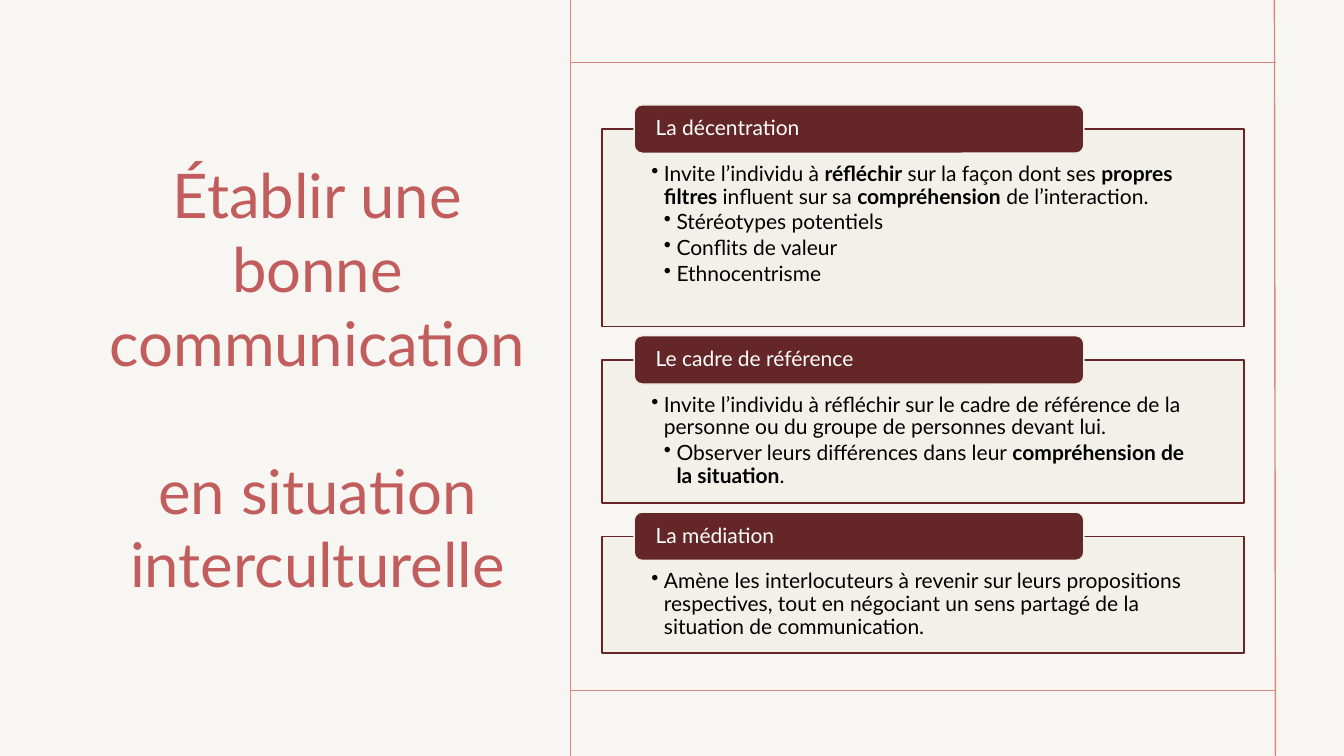
from dataclasses import dataclass

from lxml import etree
from pptx import Presentation
from pptx.dml.color import RGBColor
from pptx.enum.shapes import MSO_CONNECTOR, MSO_SHAPE
from pptx.enum.text import MSO_ANCHOR, PP_ALIGN
from pptx.oxml.ns import qn
from pptx.util import Inches, Pt

RECT, ROUND_RECT = MSO_SHAPE.RECTANGLE, MSO_SHAPE.ROUNDED_RECTANGLE
STRAIGHT = MSO_CONNECTOR.STRAIGHT
TOP, MIDDLE = MSO_ANCHOR.TOP, MSO_ANCHOR.MIDDLE
LEFT, CENTER = PP_ALIGN.LEFT, PP_ALIGN.CENTER

FONT = "Lato"
BACKGROUND, ROSE, SALMON = "F8F6F2", "C25D5D", "D8897E"
MAROON, CREAM, BLACK, WHITE = "642626", "F3F0E9", "000000", "FFFFFF"
TITLE_SIZE, BODY_SIZE = 44, 15
TAB_RISE = 0.24


@dataclass
class Bullet:
    level: int
    phrases: list[str]  # normal and bold text in turn, starting with normal


@dataclass
class Section:
    heading: str
    top: float
    height: float
    bullets: list[Bullet]


TITLE = ["Établir une bonne communication", "en situation interculturelle"]

SECTIONS = [
    Section("La décentration", 1.28, 1.96, [
        Bullet(1, ["Invite l’individu à ", "réfléchir", " sur la façon dont ses ",
                   "propres filtres ", "influent sur sa ", "compréhension",
                   " de l’interaction."]),
        Bullet(2, ["Stéréotypes potentiels"]),
        Bullet(2, ["Conflits de valeur"]),
        Bullet(2, ["Ethnocentrisme"]),
    ]),
    Section("Le cadre de référence", 3.57, 1.42, [
        Bullet(1, ["Invite l’individu à réfléchir sur le cadre de référence de la "
                   "personne ou du groupe de personnes devant lui."]),
        Bullet(2, ["Observer leurs différences dans leur ",
                   "compréhension de la situation", "."]),
    ]),
    Section("La médiation", 5.32, 1.16, [
        Bullet(1, ["Amène les interlocuteurs à revenir sur leurs propositions "
                   "respectives, tout en négociant un sens partagé de la situation "
                   "de communication."]),
    ]),
]

FRAME_LINES = [
    (5.66, 0.62, 12.66, 0.62),
    (5.66, 6.85, 12.66, 6.85),
    (5.66, 0, 5.66, 7.5),
    (12.64, 0, 12.65, 7.5),
]


def rgb(color: str) -> RGBColor:
    return RGBColor.from_string(color)


def style_run(r, size: float, color: str, bold: bool = False) -> None:
    r.font.name = FONT
    r.font.size = Pt(size)
    r.font.bold = bold
    r.font.color.rgb = rgb(color)


def set_frame(tf, anchor, left: float, top: float, right: float, bottom: float) -> None:
    """Set wrapping, anchor and insets of a text frame."""
    tf.word_wrap = True
    tf.vertical_anchor = anchor
    tf.margin_left, tf.margin_top = Inches(left), Inches(top)
    tf.margin_right, tf.margin_bottom = Inches(right), Inches(bottom)


def add_line(s, x1: float, y1: float, x2: float, y2: float) -> None:
    line = s.shapes.add_connector(STRAIGHT, Inches(x1), Inches(y1), Inches(x2), Inches(y2))
    line.line.color.rgb = rgb(SALMON)
    line.line.width = Pt(1)
    etree.SubElement(line._element.spPr, qn("a:effectLst"))


def add_box(s, kind, left: float, top: float, width: float, height: float,
            fill: str, outline: str):
    sp = s.shapes.add_shape(kind, Inches(left), Inches(top), Inches(width), Inches(height))
    sp.shadow.inherit = False
    sp.fill.solid()
    sp.fill.fore_color.rgb = rgb(fill)
    sp.line.color.rgb = rgb(outline)
    sp.line.width = Pt(1)
    return sp


def set_opacity(sp, percent: int) -> None:
    color = sp._element.spPr.find(qn("a:solidFill")).find(qn("a:srgbClr"))
    etree.SubElement(color, qn("a:alpha"), val=str(percent * 1000))


def fill_bullet(p, bullet: Bullet) -> None:
    p.alignment = LEFT
    p.level = bullet.level
    p.line_spacing = 0.9
    p.space_after = Pt(0.15 * BODY_SIZE)
    indent = Inches(0.125)
    pPr = p._p.get_or_add_pPr()
    pPr.set("marL", str(indent * bullet.level))
    pPr.set("indent", str(-indent))
    etree.SubElement(pPr, qn("a:buChar"), char="•")
    for i, phrase in enumerate(bullet.phrases):
        r = p.add_run()
        r.text = phrase
        style_run(r, BODY_SIZE, BLACK, bold=i % 2 == 1)


def add_title(s) -> None:
    tb = s.shapes.add_textbox(Inches(0.92), Inches(0.64), Inches(4.46), Inches(6.23))
    tf = tb.text_frame
    set_frame(tf, MIDDLE, 0.1, 0.05, 0.1, 0.05)
    tf.text = "\n".join(TITLE)
    for p in tf.paragraphs:
        p.alignment = CENTER
        style_run(p.runs[0], TITLE_SIZE, ROSE)
    tf.paragraphs[-1].space_before = Pt(1.2 * TITLE_SIZE)


def add_section(s, section: Section) -> None:
    body = add_box(s, RECT, 5.97, section.top, 6.37, section.height, CREAM, MAROON)
    set_opacity(body, 90)
    tf = body.text_frame
    set_frame(tf, TOP, 0.49, 0.34, 0.49, 0.12)
    for i, bullet in enumerate(section.bullets):
        fill_bullet(tf.add_paragraph() if i else tf.paragraphs[0], bullet)

    tab = add_box(s, ROUND_RECT, 6.29, section.top - TAB_RISE, 4.46, 0.48, MAROON, CREAM)
    tf = tab.text_frame
    set_frame(tf, MIDDLE, 0.19, 0, 0.19, 0)
    tf.text = section.heading
    p = tf.paragraphs[0]
    p.alignment = LEFT
    p.line_spacing = 0.9
    style_run(p.runs[0], BODY_SIZE, WHITE)


def main() -> None:
    prs = Presentation()
    prs.slide_width, prs.slide_height = Inches(13.33), Inches(7.5)
    s = prs.slides.add_slide(prs.slide_layouts[6])
    s.background.fill.solid()
    s.background.fill.fore_color.rgb = rgb(BACKGROUND)
    add_title(s)
    for ends in FRAME_LINES:
        add_line(s, *ends)
    for section in SECTIONS:
        add_section(s, section)
    prs.save("out.pptx")


if __name__ == "__main__":
    main()
